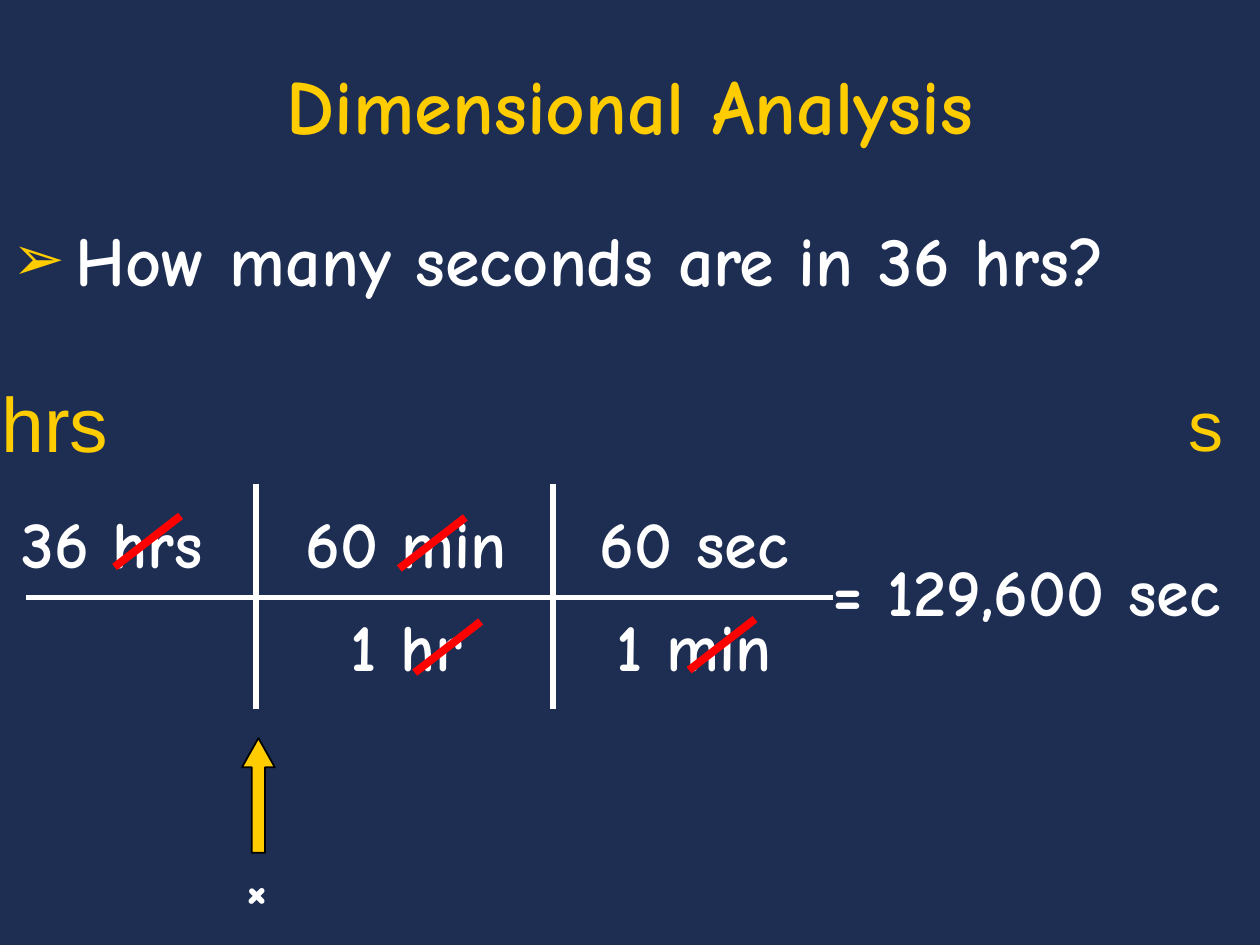
from dataclasses import dataclass

from lxml.etree import SubElement
from pptx import Presentation
from pptx.dml.color import RGBColor
from pptx.enum.shapes import MSO_CONNECTOR, MSO_SHAPE
from pptx.enum.text import MSO_ANCHOR, MSO_AUTO_SIZE, PP_ALIGN
from pptx.oxml.ns import qn
from pptx.util import Cm, Pt

NAVY = RGBColor(0x1E, 0x2E, 0x53)
GOLD = RGBColor(0xFF, 0xCC, 0x00)
WHITE = RGBColor(0xFF, 0xFF, 0xFF)
RED = RGBColor(0xFF, 0x00, 0x00)
BLACK = RGBColor(0x00, 0x00, 0x00)
HAND_FONT = "Comic Neue"
UNIT_FONT = "Arial"


@dataclass(frozen=True)
class Box:
    """A frame in centimetres."""
    left: float
    top: float
    width: float
    height: float

    def lengths(self):
        return Cm(self.left), Cm(self.top), Cm(self.width), Cm(self.height)


@dataclass(frozen=True)
class Label:
    lines: tuple[str, ...]
    box: Box
    size: int = 38
    align: PP_ALIGN = PP_ALIGN.CENTER


@dataclass(frozen=True)
class Rule:
    """A straight line in centimetres."""
    x1: float
    y1: float
    x2: float
    y2: float
    color: RGBColor = WHITE
    weight: float = 3


FACTOR_TOP = 10
BAR_Y = 12.04
DIVIDER_TOP, DIVIDER_BOTTOM = 9.75, 14.3
STRIKE_WIDTH, STRIKE_HEIGHT = 1.33, 1.03

CALCULATION = [
    Label(("36 hrs",), Box(0.18, FACTOR_TOP, 6.05, 2.18), align=PP_ALIGN.LEFT),
    Label(("60 min", "1 hr"), Box(5.33, FACTOR_TOP, 5.72, 4.5)),
    Label(("60 sec", "1 min"), Box(11.13, FACTOR_TOP, 5.72, 4.5)),
    Label(("= 129,600 sec",), Box(16, 10.97, 9.4, 3.78)),
    Label(("×",), Box(4.5, 17.04, 1.35, 2.01), size=34),
]
UNITS = [
    Label(("hrs",), Box(-0.23, 7.44, 2.67, 2.11), size=44),
    Label(("s",), Box(23.7, 7.57, 1.22, 1.96), size=40),
]
GRID = [Rule(0.53, BAR_Y, 16.79, BAR_Y)] + [
    Rule(x, DIVIDER_TOP, x, DIVIDER_BOTTOM) for x in (5.16, 11.15)
]
STRIKES = [
    Rule(x, y, x + STRIKE_WIDTH, y - STRIKE_HEIGHT, RED, 4.5)
    for x, y in ((2.31, 11.43), (8.36, 13.56), (8.05, 11.46), (13.89, 13.51))
]


def write_text(frame, *lines: str, size: int, font: str = HAND_FONT,
               color: RGBColor = WHITE, bold: bool = True,
               align: PP_ALIGN = PP_ALIGN.CENTER, hanging: bool = False,
               line_gap: float = 0, wrap: bool = True,
               anchor: MSO_ANCHOR = MSO_ANCHOR.TOP) -> None:
    frame.auto_size = MSO_AUTO_SIZE.NONE
    frame.word_wrap = wrap
    frame.vertical_anchor = anchor
    for index, line in enumerate(lines):
        paragraph = frame.add_paragraph() if index else frame.paragraphs[0]
        paragraph.alignment = align
        paragraph.space_before = Pt(line_gap if index else 0)
        if hanging:
            properties = paragraph._p.get_or_add_pPr()
            properties.set("marL", str(Cm(1.27)))
            properties.set("indent", str(-Cm(1.27)))
        run = paragraph.add_run()
        run.text = line
        run.font.size = Pt(size)
        run.font.name = font
        run.font.bold = bold
        run.font.color.rgb = color


def add_label(slide, label: Label, **text_format) -> None:
    text_box = slide.shapes.add_textbox(*label.box.lengths())
    write_text(text_box.text_frame, *label.lines, size=label.size,
               align=label.align, **text_format)


def add_rule(slide, rule: Rule) -> None:
    connector = slide.shapes.add_connector(
        MSO_CONNECTOR.STRAIGHT,
        Cm(rule.x1), Cm(rule.y1), Cm(rule.x2), Cm(rule.y2))
    connector.line.color.rgb = rule.color
    connector.line.width = Pt(rule.weight)
    SubElement(connector._element.spPr, qn("a:effectLst"))


def place(shape, box: Box) -> None:
    shape.left, shape.top, shape.width, shape.height = box.lengths()


def add_bullet(paragraph, character: str, color: RGBColor, percent: int) -> None:
    properties = paragraph._p.get_or_add_pPr()
    bullet_color = SubElement(properties, qn("a:buClr"))
    SubElement(bullet_color, qn("a:srgbClr"), val=str(color))
    SubElement(properties, qn("a:buSzPct"), val=str(percent * 1000))
    SubElement(properties, qn("a:buChar"), char=character)


def add_up_arrow(slide, box: Box) -> None:
    arrow = slide.shapes.add_shape(MSO_SHAPE.UP_ARROW, *box.lengths())
    arrow.adjustments[0] = 0.41
    arrow.adjustments[1] = 0.89
    arrow.shadow.inherit = False
    arrow.fill.solid()
    arrow.fill.fore_color.rgb = GOLD
    arrow.line.color.rgb = BLACK
    arrow.line.width = Pt(1)


def main() -> None:
    presentation = Presentation()
    presentation.slide_width, presentation.slide_height = Cm(25.4), Cm(19.05)
    slide = presentation.slides.add_slide(presentation.slide_layouts[1])
    slide.background.fill.solid()
    slide.background.fill.fore_color.rgb = NAVY

    title, question = slide.placeholders
    place(title, Box(1.91, 0.81, 21.59, 2.34))
    write_text(title.text_frame, "Dimensional Analysis", size=44, color=GOLD,
               anchor=MSO_ANCHOR.BOTTOM)
    place(question, Box(0, 4.24, 25.4, 3.91))
    write_text(question.text_frame, "How many seconds are in 36 hrs?", size=40,
               align=PP_ALIGN.LEFT, hanging=True)
    add_bullet(question.text_frame.paragraphs[0], "➢", GOLD, 90)

    for label in CALCULATION:
        add_label(slide, label, hanging=True, line_gap=13)
    for label in UNITS:
        add_label(slide, label, font=UNIT_FONT, color=GOLD, bold=False, wrap=False)
    for rule in GRID + STRIKES:
        add_rule(slide, rule)
    add_up_arrow(slide, Box(4.88, 14.88, 0.66, 2.31))

    presentation.save("out.pptx")


if __name__ == "__main__":
    main()
